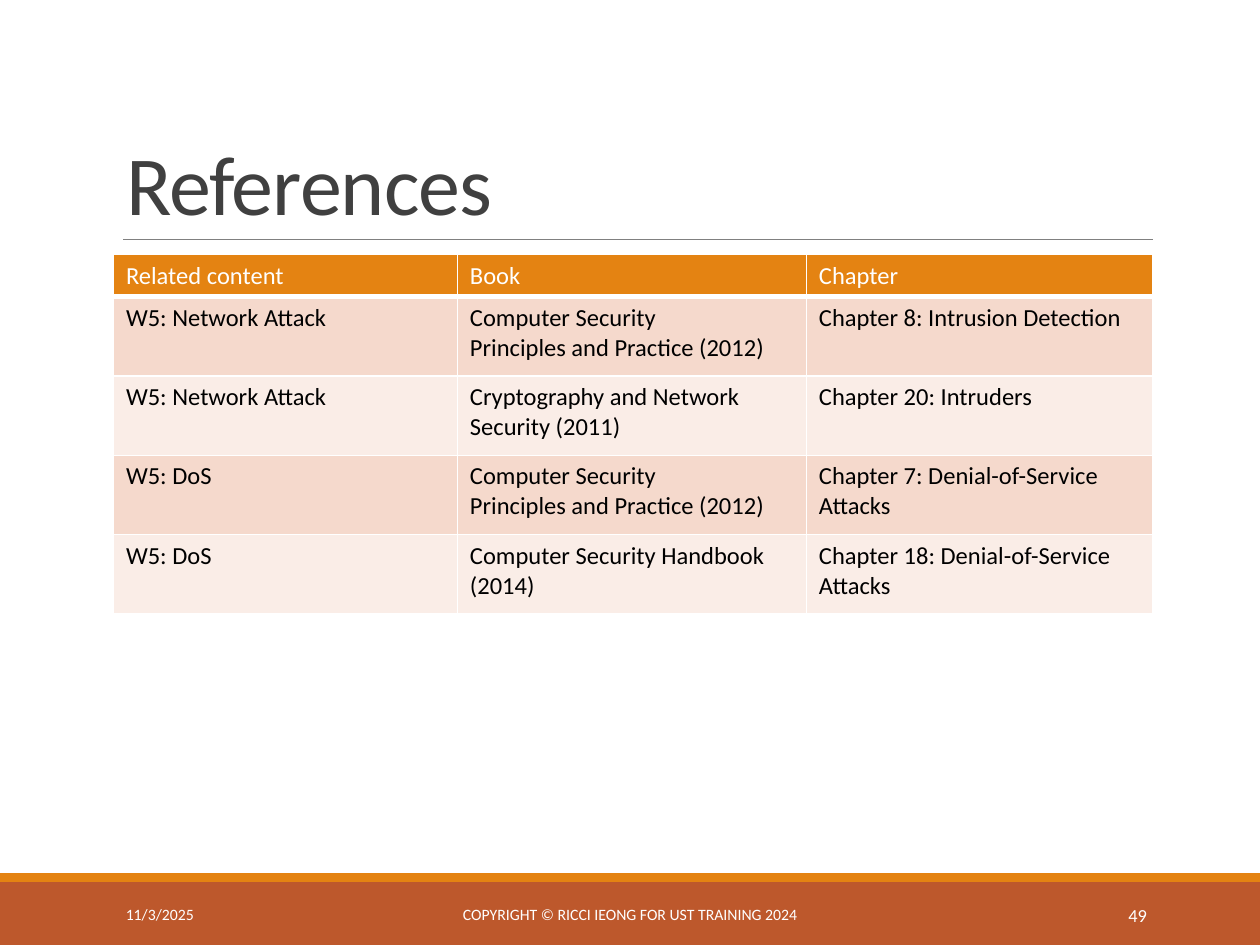
from lxml.etree import SubElement
from pptx import Presentation
from pptx.dml.color import RGBColor
from pptx.enum.shapes import MSO_CONNECTOR, MSO_SHAPE
from pptx.enum.text import MSO_ANCHOR, MSO_AUTO_SIZE, PP_ALIGN
from pptx.oxml import parse_xml
from pptx.oxml.ns import nsdecls, qn
from pptx.util import Inches, Pt

COLORS = {
    "white": "FFFFFF", "black": "000000", "title": "404040", "rule": "808080",
    "orange": "E48312", "rust": "BD582C", "dark_band": "F5D9CC", "light_band": "FAEDE7",
}
TITLE = "References"
ROWS = [
    ("Related content", "Book", "Chapter"),
    ("W5: Network Attack", "Computer Security \nPrinciples and Practice (2012)",
     "Chapter 8: Intrusion Detection"),
    ("W5: Network Attack", "Cryptography and Network Security (2011)",
     "Chapter 20: Intruders"),
    ("W5: DoS", "Computer Security \nPrinciples and Practice (2012)",
     "Chapter 7: Denial-of-Service Attacks"),
    ("W5: DoS", "Computer Security Handbook (2014)",
     "Chapter 18: Denial-of-Service Attacks"),
]
COLUMN_WIDTHS = (2.73, 2.77, 2.75)
HEADER_HEIGHT, ROW_HEIGHT = 0.32, 0.63
BANDS = [("rust", 7, 0.5), ("orange", 6.93, 0.07)]
FOOTERS = [
    ("11/3/2025", 0.9, 2.03, 9, PP_ALIGN.LEFT),
    ("COPYRIGHT © RICCI IEONG FOR UST TRAINING 2024", 3.02, 3.96, 9, PP_ALIGN.CENTER),
    ("49", 8.12, 1.08, 10.5, PP_ALIGN.RIGHT),
]


def rgb(name):
    return RGBColor.from_string(COLORS[name])


def write(paragraph, text, size, color, alignment=PP_ALIGN.LEFT):
    paragraph.text = text
    paragraph.alignment = alignment
    paragraph.font.color.rgb = rgb(color)
    for run in paragraph.runs:
        run.font.color.rgb = rgb(color)
        for name, value in {"name": "Calibri", "size": Pt(size), "bold": False}.items():
            setattr(run.font, name, value)


def set_borders(cell, is_header):
    properties = cell._tc.get_or_add_tcPr()
    for position, side in enumerate("LRTB"):
        width = Pt(3 if is_header and side == "B" else 1)
        properties.insert(position, parse_xml(
            f'<a:ln{side} {nsdecls("a")} w="{width}"><a:solidFill>'
            f'<a:srgbClr val="{COLORS["white"]}"/></a:solidFill></a:ln{side}>'))


def add_frame(slide):
    for color, top, height in BANDS:
        band = slide.shapes.add_shape(
            MSO_SHAPE.RECTANGLE, 0, Inches(top), Inches(10), Inches(height))
        band.shadow.inherit = False
        band.fill.solid()
        band.fill.fore_color.rgb = rgb(color)
        band.line.fill.background()
    rule = slide.shapes.add_connector(
        MSO_CONNECTOR.STRAIGHT, Inches(0.98), Inches(1.9), Inches(9.15), Inches(1.9))
    rule.line.color.rgb = rgb("rule")
    rule.line.width = Pt(0.5)
    SubElement(rule._element.spPr, qn("a:effectLst"))
    for text, left, width, size, alignment in FOOTERS:
        box = slide.shapes.add_textbox(Inches(left), Inches(7.06), Inches(width), Inches(0.4))
        box.text_frame.word_wrap = True
        box.text_frame.vertical_anchor = MSO_ANCHOR.MIDDLE
        write(box.text_frame.paragraphs[0], text, size, "white", alignment)


def add_title(slide):
    title = slide.shapes.title
    bounds = {"left": 0.9, "top": 0.31, "width": 8.25, "height": 1.59}
    for name, value in bounds.items():
        setattr(title, name, Inches(value))
    title.text_frame.auto_size = MSO_AUTO_SIZE.NONE
    title.text_frame.vertical_anchor = MSO_ANCHOR.BOTTOM
    paragraph = title.text_frame.paragraphs[0]
    write(paragraph, TITLE, 48, "title")
    paragraph.line_spacing = 0.85
    paragraph.runs[0].font._element.set("spc", "-50")


def add_references(slide):
    height = HEADER_HEIGHT + ROW_HEIGHT * (len(ROWS) - 1)
    table = slide.shapes.add_table(
        len(ROWS), len(COLUMN_WIDTHS), Inches(0.9), Inches(2.02),
        Inches(sum(COLUMN_WIDTHS)), Inches(height)).table
    for column, width in zip(table.columns, COLUMN_WIDTHS):
        column.width = Inches(width)
    for index, texts in enumerate(ROWS):
        is_header = index == 0
        table.rows[index].height = Inches(HEADER_HEIGHT if is_header else ROW_HEIGHT)
        fill = "orange" if is_header else ("light_band", "dark_band")[index % 2]
        for cell, text in zip(table.rows[index].cells, texts):
            cell.fill.solid()
            cell.fill.fore_color.rgb = rgb(fill)
            set_borders(cell, is_header)
            write(cell.text_frame.paragraphs[0], text, 14, "white" if is_header else "black")


def main():
    presentation = Presentation()
    presentation.slide_width = Inches(10)
    presentation.slide_height = Inches(7.5)
    slide = presentation.slides.add_slide(presentation.slide_layouts[5])
    add_frame(slide)
    add_title(slide)
    add_references(slide)
    presentation.save("out.pptx")


if __name__ == "__main__":
    main()
